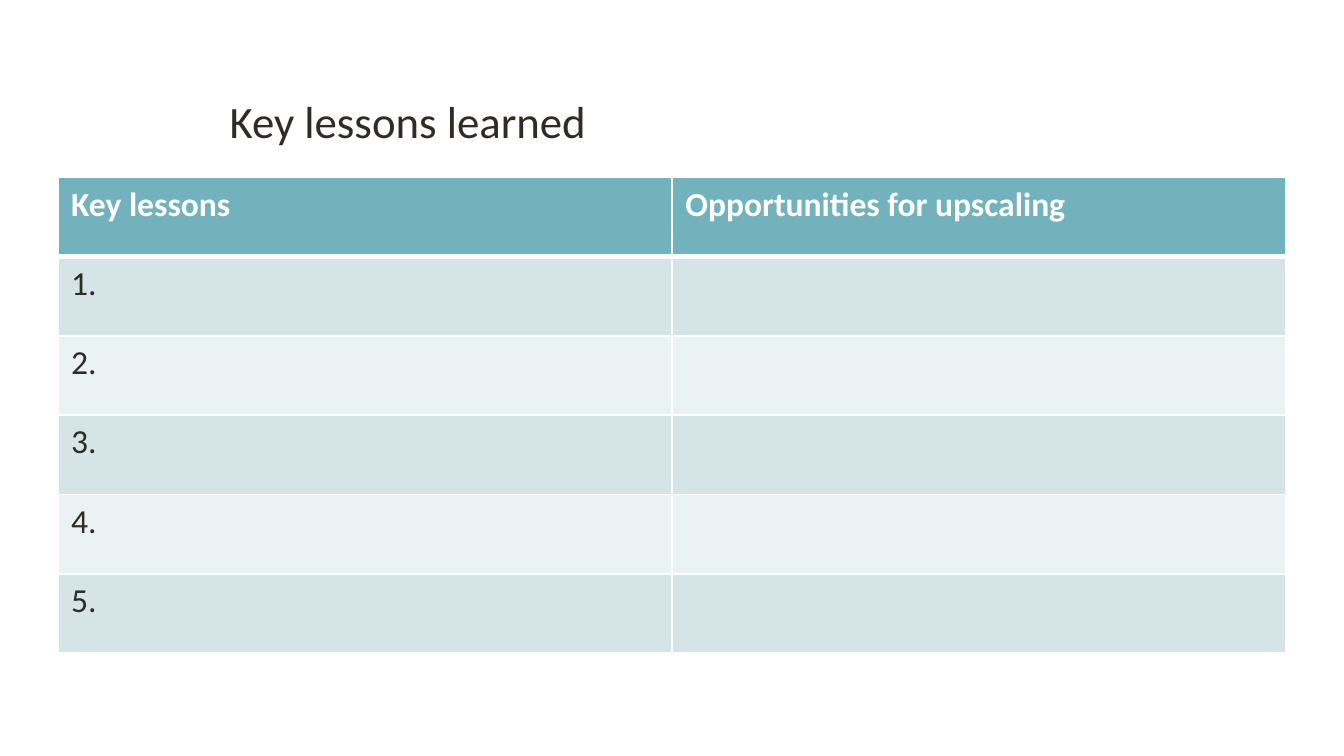
from lxml import etree
from pptx import Presentation
from pptx.dml.color import RGBColor
from pptx.enum.text import MSO_ANCHOR
from pptx.oxml.ns import qn
from pptx.util import Inches, Pt

TOP = MSO_ANCHOR.TOP
FONT = "Calibri"
WHITE, DARK, TEAL = "FFFFFF", "302C24", "71B2BC"
BANDS = ["D5E4E7", "EBF2F3"]
HEADS = ["Key lessons", "Opportunities for upscaling"]
COUNT = 5


def color(code):
    return RGBColor.from_string(code)


def add_run(para, text, size, code, bold=False):
    run = para.add_run()
    run.text = text
    font = run.font
    font.name, font.size, font.bold = FONT, Pt(size), bold
    font.color.rgb = color(code)


def add_title(slide, text):
    box = slide.shapes.add_textbox(Inches(1.61), Inches(0.69), Inches(7.62), Inches(0.63))
    frame = box.text_frame
    frame.word_wrap = True
    frame.vertical_anchor = TOP
    para = frame.paragraphs[0]
    para.line_spacing = 0.9
    add_run(para, text, 24, DARK)


def add_edge(cell, side, width):
    props = cell._tc.get_or_add_tcPr()
    line = etree.SubElement(props, qn(f"a:ln{side}"), w=str(Pt(width)))
    fill = etree.SubElement(line, qn("a:solidFill"))
    etree.SubElement(fill, qn("a:srgbClr"), val=WHITE)


def style_cell(cell, code, above, below):
    for side, width in zip("LRTB", (1, 1, above, below)):
        add_edge(cell, side, width)
    cell.fill.solid()
    cell.fill.fore_color.rgb = color(code)


def add_grid(slide, rows):
    shape = slide.shapes.add_table(
        len(rows), len(HEADS), Inches(0.43), Inches(1.32), Inches(9.14), Inches(3.54))
    table = shape.table
    for i, row in enumerate(rows):
        head = i == 0
        back = TEAL if head else BANDS[(i - 1) % 2]
        for j, text in enumerate(row):
            cell = table.cell(i, j)
            style_cell(cell, back, 3 if i == 1 else 1, 3 if head else 1)
            if text:
                add_run(cell.text_frame.paragraphs[0], text, 18, WHITE if head else DARK, head)


def main():
    deck = Presentation()
    deck.slide_width = Inches(10)
    deck.slide_height = deck.slide_width * 9 // 16
    slide = deck.slides.add_slide(deck.slide_layouts[6])
    add_title(slide, "Key lessons learned")
    add_grid(slide, [HEADS] + [[f"{n}.", ""] for n in range(1, COUNT + 1)])
    deck.save("out.pptx")


if __name__ == "__main__":
    main()
